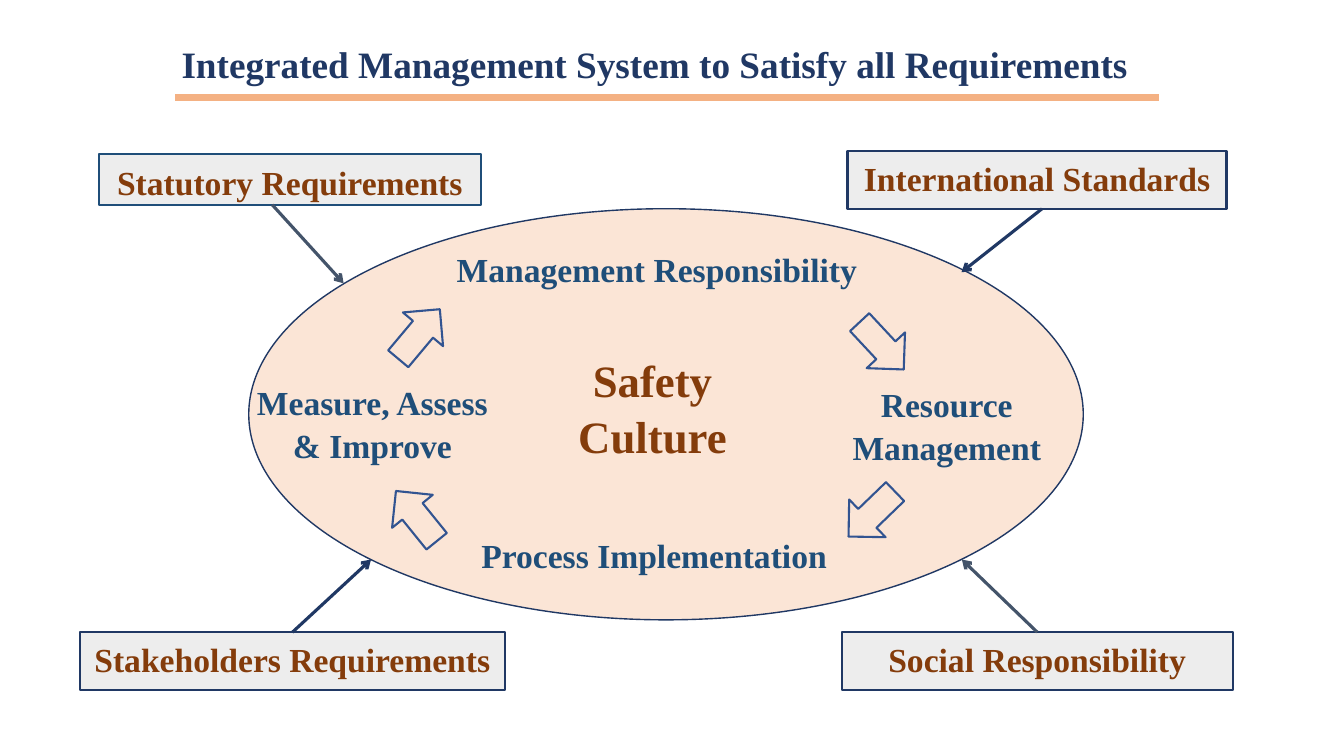
import pptx
import pptx.util
import pptx.dml.color
import pptx.enum.shapes
import pptx.enum.text
import pptx.oxml.ns
from lxml import etree

Cm = pptx.util.Cm
Pt = pptx.util.Pt
SHAPE = pptx.enum.shapes.MSO_SHAPE
FONT = "Times New Roman"
COLORS = {
    "navy": "203864",
    "blue": "1F4E79",
    "brown": "843C0B",
    "slate": "44546A",
    "arrow": "325491",
    "orange": "F4B183",
    "peach": "FBE5D6",
    "gray": "EDEDED",
}


def color(name):
    return pptx.dml.color.RGBColor.from_string(COLORS[name])


def write_text(shape, text, size, color_name):
    frame = shape.text_frame
    frame.word_wrap = True
    frame.vertical_anchor = pptx.enum.text.MSO_ANCHOR.TOP
    frame.margin_left = frame.margin_right = Cm(0.25)
    frame.margin_top = frame.margin_bottom = Cm(0.13)
    frame.text = text
    for paragraph in frame.paragraphs:
        paragraph.alignment = pptx.enum.text.PP_ALIGN.CENTER
        paragraph.line_spacing = 1.05
        for run in paragraph.runs:
            run.font.name = FONT
            run.font.size = Pt(size)
            run.font.bold = True
            run.font.color.rgb = color(color_name)


def add_label(slide, box, text, size, color_name):
    label = slide.shapes.add_textbox(*map(Cm, box))
    write_text(label, text, size, color_name)


def add_outlined(slide, kind, box, fill, line, width):
    shape = slide.shapes.add_shape(kind, *map(Cm, box))
    shape.shadow.inherit = False
    if fill:
        shape.fill.solid()
        shape.fill.fore_color.rgb = color(fill)
    else:
        shape.fill.background()
    shape.line.color.rgb = color(line)
    shape.line.width = Pt(width)
    return shape


def add_line(slide, start, end, color_name, width, arrow=False):
    connector = slide.shapes.add_connector(
        pptx.enum.shapes.MSO_CONNECTOR.STRAIGHT, *map(Cm, start + end))
    connector.line.color.rgb = color(color_name)
    connector.line.width = Pt(width)
    properties = connector.element.spPr
    if arrow:
        outline = properties.find(pptx.oxml.ns.qn("a:ln"))
        etree.SubElement(outline, pptx.oxml.ns.qn("a:tailEnd"), type="arrow")
    etree.SubElement(properties, pptx.oxml.ns.qn("a:effectLst"))


def add_title(slide, box, text):
    left, top, width, height = box
    title = slide.shapes.title
    title.left, title.top, title.width, title.height = map(Cm, box)
    write_text(title, text, 26.6, "navy")
    rule_left, rule_top = left + 0.56, top + 1.6
    add_line(slide, (rule_left, rule_top), (rule_left + 24.79, rule_top), "orange", 4.5)


def add_cycle(slide, box):
    left, top, width, height = box
    add_outlined(slide, SHAPE.OVAL, box, "peach", "navy", 1)
    labels = [
        ("Management Responsibility", 4.67, 0.84, 11.23, 1.27, 24, "blue"),
        ("Resource\nManagement", 12.88, 4.24, 9.42, 2.31, 24, "blue"),
        ("Process Implementation", 4.6, 8.03, 11.23, 1.27, 24, "blue"),
        ("Measure, Assess\n& Improve", -0.91, 4.19, 8.05, 2.31, 24, "blue"),
        ("Safety\nCulture", 7.19, 3.43, 5.97, 3, 32, "brown"),
    ]
    for text, x, y, label_width, label_height, size, color_name in labels:
        add_label(slide, (left + x, top + y, label_width, label_height), text, size, color_name)
    arrows = [(15.29, 2.64, 317), (15.04, 6.88, 46), (3.56, 6.93, 141), (3.63, 2.34, 220)]
    for x, y, rotation in arrows:
        arrow = add_outlined(slide, SHAPE.DOWN_ARROW, (left + x, top + y, 1.32, 1.63),
                             None, "arrow", 1.5)
        arrow.rotation = rotation


def add_requirement(slide, box, text, border, arrow_color, arrow_offset, reach):
    left, top, width, height = box
    requirement = add_outlined(slide, SHAPE.RECTANGLE, box, "gray", border, 1.5)
    write_text(requirement, text, 24, "brown")
    reach_x, reach_y = reach
    start_x = left + arrow_offset
    start_y = top + height if reach_y > 0 else top
    add_line(slide, (start_x, start_y), (start_x + reach_x, start_y + reach_y),
             arrow_color, 2.25, arrow=True)


def main():
    presentation = pptx.Presentation()
    presentation.slide_width = Cm(33.87)
    presentation.slide_height = Cm(19.05)
    slide = presentation.slides.add_slide(presentation.slide_layouts.get_by_name("Title Only"))
    add_title(slide, (3.86, 0.86, 25.32, 1.4),
              "Integrated Management System to Satisfy all Requirements")
    add_cycle(slide, (6.27, 5.26, 21.03, 10.36))
    requirements = [
        ((2.49, 3.89, 9.63, 1.27), "Statutory Requirements", "blue", "slate", 4.37, (1.8, 1.98)),
        ((21.36, 3.81, 9.55, 1.45), "International Standards", "navy", "navy", 4.9, (-2.03, 1.6)),
        ((21.21, 15.93, 9.86, 1.45), "Social Responsibility", "navy", "slate", 4.93, (-1.9, -1.83)),
        ((2.01, 15.93, 10.72, 1.45), "Stakeholders Requirements", "navy", "navy", 5.36, (1.98, -1.83)),
    ]
    for requirement in requirements:
        add_requirement(slide, *requirement)
    presentation.save("out.pptx")


if __name__ == "__main__":
    main()
